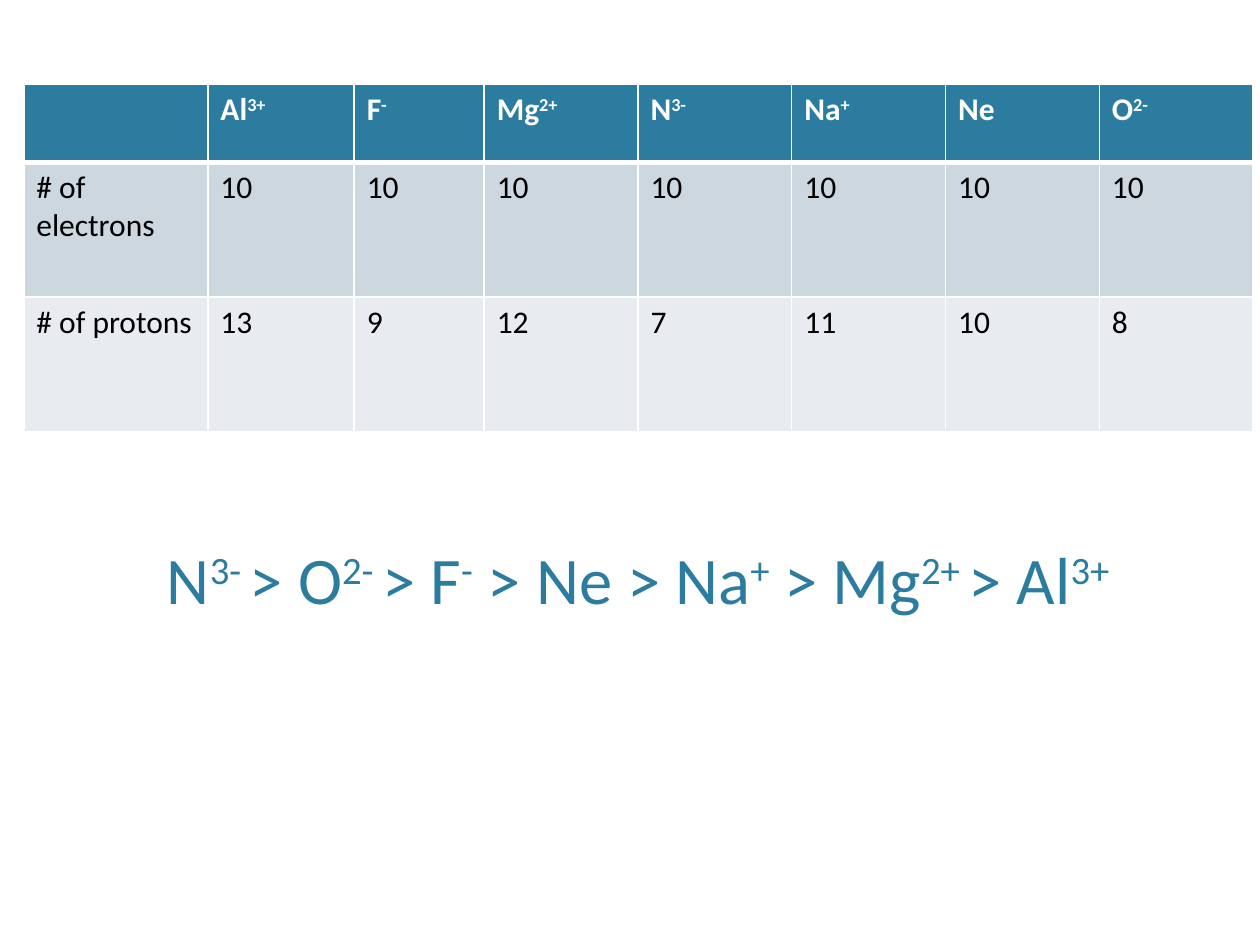
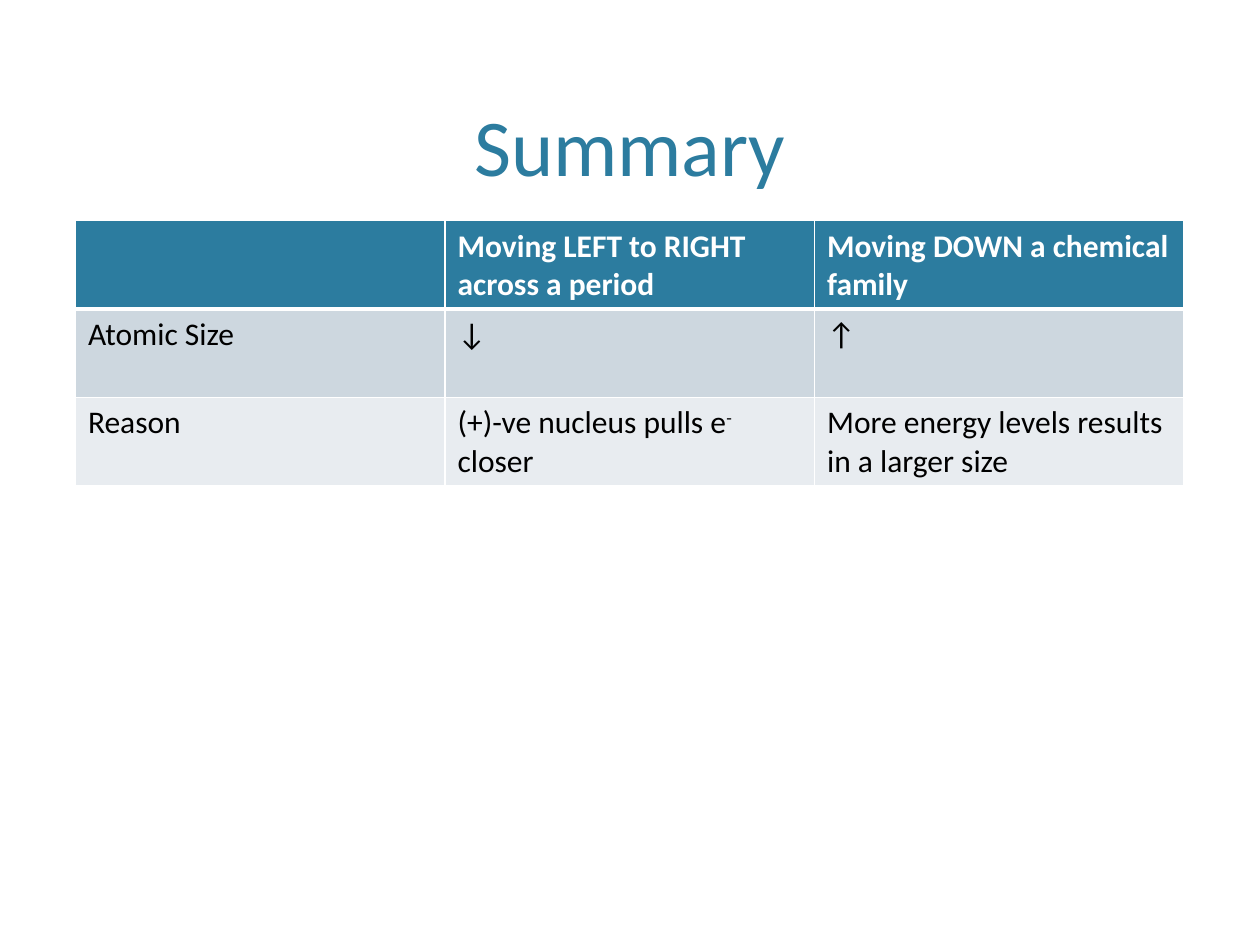
from dataclasses import dataclass

import pptx
import pptx.dml.color
import pptx.enum.text
import pptx.oxml
import pptx.oxml.ns
import pptx.slide
import pptx.table
import pptx.text.text
import pptx.util
from pptx.util import Cm


@dataclass(frozen=True)
class Theme:
    font: str = "Calibri"
    accent: str = "2C7C9F"
    text: str = "000000"
    white: str = "FFFFFF"
    bands: tuple[str, str] = ("CDD7DF", "E8ECF0")
    title_size: int = 46
    ranking_size: int = 38
    table_size: int = 18
    thin: int = 1
    thick: int = 3


@dataclass(frozen=True)
class Title:
    text: str
    left: float
    top: float
    width: float
    size: int
    height: float = 3.71


@dataclass(frozen=True)
class Grid:
    left: float
    top: float
    columns: list[float]
    rows: list[float]
    cells: list[list[str]]


THEME = Theme()

RANKING = Title(
    "N|3- |> O|2- |> F|-| > Ne > Na|+| > Mg|2+ |> Al|3+",
    0.48, 8.86, 24.77, THEME.ranking_size,
)
PARTICLES = Grid(
    0.48, 1.7,
    [3.71, 2.95, 2.62] + [3.1] * 5,
    [1.57, 2.72, 2.72],
    [
        ["", "Al|3+", "F|-", "Mg|2+", "N|3-", "Na|+", "Ne", "O|2-"],
        ["# of electrons"] + ["10"] * 7,
        ["# of protons", "13", "9", "12", "7", "11", "10", "8"],
    ],
)
SUMMARY = Title("Summary", 1.52, 0.3, 22.35, THEME.title_size)
TRENDS = Grid(
    1.52, 4.45,
    [7.45] * 3,
    [1.78] * 3,
    [
        ["", "Moving LEFT to RIGHT across a period", "Moving DOWN a chemical family"],
        ["Atomic Size", "↓", "↑"],
        ["Reason", "(+)-ve nucleus pulls e|-| closer",
         "More energy levels results in a larger size"],
    ],
)


def write(para: pptx.text.text._Paragraph, text: str, size: int, color: str,
          bold: bool = False) -> None:
    """Fill a paragraph; every second part between bars is superscript."""
    font_format = {"name": THEME.font, "size": pptx.util.Pt(size), "bold": bold}
    for index, part in enumerate(text.split("|")):
        if not part:
            continue
        span = para.add_run()
        span.text = part
        for name, value in font_format.items():
            setattr(span.font, name, value)
        span.font.color.rgb = pptx.dml.color.RGBColor.from_string(color)
        if index % 2:
            span._r.get_or_add_rPr().set("baseline", "30000")


def add_title(page: pptx.slide.Slide, title: Title) -> None:
    box = page.shapes.add_textbox(
        Cm(title.left), Cm(title.top), Cm(title.width), Cm(title.height))
    frame_format = {
        "word_wrap": True,
        "vertical_anchor": pptx.enum.text.MSO_ANCHOR.BOTTOM,
    }
    for name, value in frame_format.items():
        setattr(box.text_frame, name, value)
    para = box.text_frame.paragraphs[0]
    para.alignment = pptx.enum.text.PP_ALIGN.CENTER
    write(para, title.text, title.size, THEME.accent)


def add_borders(cell: pptx.table._Cell, row: int) -> None:
    """Draw white borders, thick between the header and the body."""
    widths = {
        "lnL": THEME.thin,
        "lnR": THEME.thin,
        "lnT": THEME.thick if row == 1 else THEME.thin,
        "lnB": THEME.thick if row == 0 else THEME.thin,
    }
    properties = cell._tc.get_or_add_tcPr()
    for side, width in widths.items():
        properties.append(pptx.oxml.parse_xml(
            f'<a:{side} {pptx.oxml.ns.nsdecls("a")} w="{pptx.util.Pt(width)}">'
            f'<a:solidFill><a:srgbClr val="{THEME.white}"/></a:solidFill>'
            f'</a:{side}>'))


def add_grid(page: pptx.slide.Slide, grid: Grid) -> None:
    table = page.shapes.add_table(
        len(grid.rows), len(grid.columns), Cm(grid.left), Cm(grid.top),
        Cm(sum(grid.columns)), Cm(sum(grid.rows))).table
    for column, width in zip(table.columns, grid.columns):
        column.width = Cm(width)
    for index, (row, height) in enumerate(zip(table.rows, grid.rows)):
        row.height = Cm(height)
        header = index == 0
        fill = THEME.accent if header else THEME.bands[(index - 1) % 2]
        color = THEME.white if header else THEME.text
        for cell, text in zip(row.cells, grid.cells[index]):
            add_borders(cell, index)
            cell.fill.solid()
            cell.fill.fore_color.rgb = pptx.dml.color.RGBColor.from_string(fill)
            write(cell.text_frame.paragraphs[0], text, THEME.table_size, color, header)


def main() -> None:
    deck = pptx.Presentation()
    deck.slide_width, deck.slide_height = Cm(25.4), Cm(19.05)
    for title, grid in ((RANKING, PARTICLES), (SUMMARY, TRENDS)):
        page = deck.slides.add_slide(deck.slide_layouts[6])
        add_title(page, title)
        add_grid(page, grid)
    deck.save("out.pptx")


if __name__ == "__main__":
    main()
